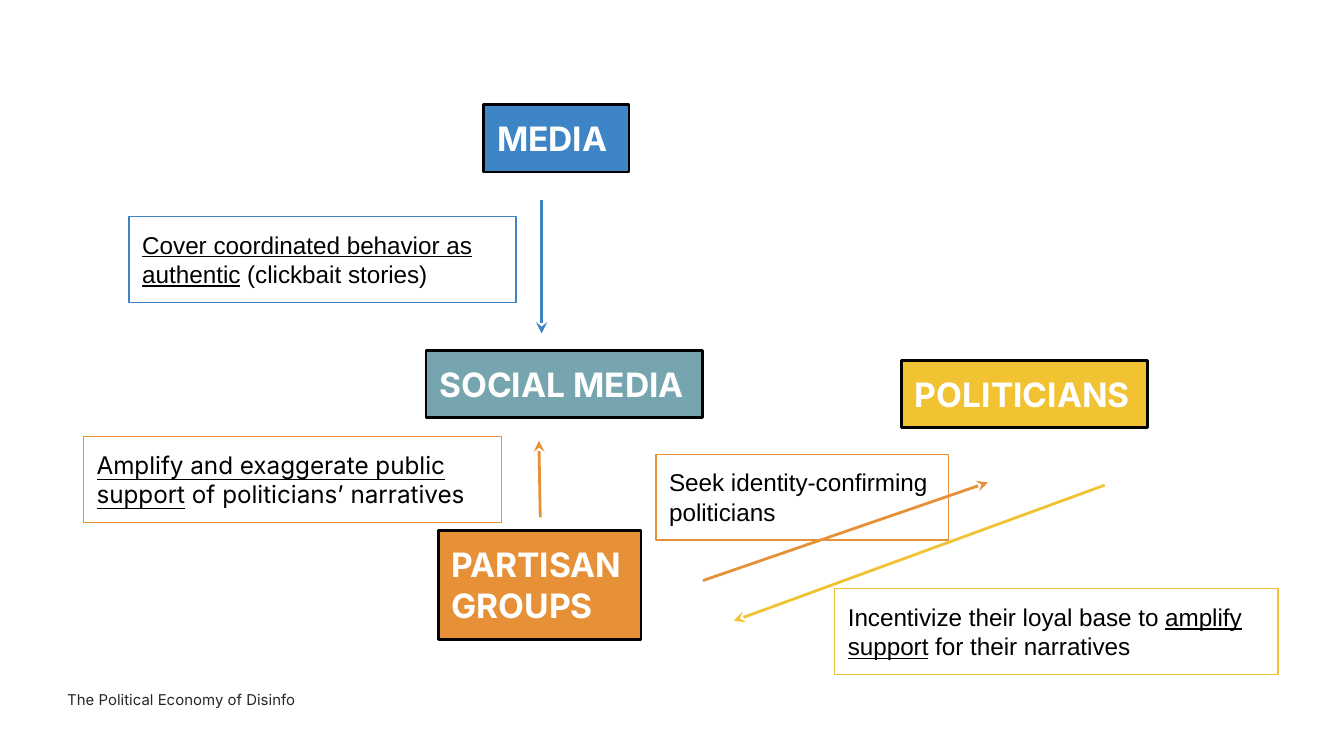
from typing import NamedTuple

from lxml import etree
from pptx import Presentation
from pptx.dml.color import RGBColor
from pptx.enum import shapes, text
from pptx.oxml import ns
from pptx.util import Inches, Pt

BLUE = RGBColor(0x3D, 0x85, 0xC6)
TEAL = RGBColor(0x76, 0xA5, 0xAF)
ORANGE = RGBColor(0xE6, 0x91, 0x38)
YELLOW = RGBColor(0xF1, 0xC2, 0x32)
BLACK = RGBColor(0, 0, 0)
WHITE = RGBColor(0xFF, 0xFF, 0xFF)
GREY = RGBColor(0x26, 0x26, 0x26)


class Area(NamedTuple):
    left: float
    top: float
    width: float
    height: float


class Actor(NamedTuple):
    name: str
    area: Area
    color: RGBColor


class Note(NamedTuple):
    runs: list[tuple[str, bool]]  # words, underlined
    area: Area
    color: RGBColor
    font: str = "Arial"


class Arrow(NamedTuple):
    tail: tuple[float, float]
    tip: tuple[float, float]
    color: RGBColor


ACTORS = [
    Actor("POLITICIANS", Area(6.71, 2.68, 1.83, 0.5), YELLOW),
    Actor("PARTISAN GROUPS", Area(3.26, 3.95, 1.51, 0.81), ORANGE),
    Actor("MEDIA", Area(3.6, 0.78, 1.08, 0.5), BLUE),
    Actor("SOCIAL MEDIA", Area(3.17, 2.61, 2.06, 0.5), TEAL),
]
ARROWS = [
    Arrow((8.22, 3.61), (5.46, 4.62), YELLOW),
    Arrow((4.02, 3.85), (4.01, 3.28), ORANGE),
    Arrow((4.03, 1.49), (4.03, 2.48), BLUE),
    Arrow((5.23, 4.32), (7.35, 3.59), ORANGE),
]
NOTES = [
    Note([("Amplify and exaggerate public support", True),
          (" of politicians’ narratives", False)],
         Area(0.62, 3.25, 3.11, 0.64), ORANGE, "Inter"),
    Note([("Cover coordinated behavior as authentic", True),
          (" (clickbait stories)", False)],
         Area(0.96, 1.61, 2.88, 0.64), BLUE),
    Note([("Seek identity-confirming politicians", False)],
         Area(4.88, 3.38, 2.18, 0.64), ORANGE),
    Note([("Incentivize their loyal base to ", False),
          ("amplify support", True),
          (" for their narratives", False)],
         Area(6.21, 4.38, 3.3, 0.64), YELLOW),
]


def style(para, font: str, size: float, color: RGBColor, bold: bool = False) -> None:
    para.alignment = text.PP_ALIGN.LEFT
    para.font.name = font
    para.font.size = Pt(size)
    para.font.color.rgb = color
    para.font.bold = bold


def set_frame(frame, inset: float) -> None:
    frame.word_wrap = True
    frame.vertical_anchor = text.MSO_ANCHOR.TOP
    frame.margin_left = frame.margin_right = Inches(inset)
    frame.margin_top = frame.margin_bottom = Inches(inset)


def add_box(slide, area: Area, edge: RGBColor, width: float):
    """Add an unfilled, outlined rectangle ready for text."""
    box = slide.shapes.add_shape(shapes.MSO_SHAPE.RECTANGLE, *map(Inches, area))
    box.shadow.inherit = False
    box.fill.background()
    box.line.color.rgb = edge
    box.line.width = Pt(width)
    set_frame(box.text_frame, 0.1)
    return box


def add_actor(slide, actor: Actor) -> None:
    box = add_box(slide, actor.area, BLACK, 1.5)
    box.fill.solid()
    box.fill.fore_color.rgb = actor.color
    para = box.text_frame.paragraphs[0]
    para.text = actor.name
    style(para, "Inter", 18, WHITE, bold=True)


def add_note(slide, note: Note) -> None:
    box = add_box(slide, note.area, note.color, 0.75)
    para = box.text_frame.paragraphs[0]
    style(para, note.font, 13, BLACK)
    for words, under in note.runs:
        run = para.add_run()
        run.text = words
        run.font.underline = under


def add_arrow(slide, arrow: Arrow) -> None:
    line = slide.shapes.add_connector(
        shapes.MSO_CONNECTOR.STRAIGHT, *map(Inches, arrow.tail + arrow.tip))
    line.line.color.rgb = arrow.color
    line.line.width = Pt(1.5)
    props = line._element.spPr
    etree.SubElement(props.find(ns.qn("a:ln")), ns.qn("a:tailEnd"), type="stealth")
    etree.SubElement(props, ns.qn("a:effectLst"))


def add_footer(slide, words: str, area: Area) -> None:
    frame = slide.shapes.add_textbox(*map(Inches, area)).text_frame
    set_frame(frame, 0)
    para = frame.paragraphs[0]
    para.text = words
    para.line_spacing = 1.2
    style(para, "Inter", 8, GREY)


def main() -> None:
    deck = Presentation()
    deck.slide_width = Inches(10)
    deck.slide_height = deck.slide_width * 9 // 16
    slide = deck.slides.add_slide(deck.slide_layouts[6])
    for actor in ACTORS:
        add_actor(slide, actor)
    for arrow in ARROWS:
        add_arrow(slide, arrow)
    for note in NOTES:
        add_note(slide, note)
    add_footer(slide, "The Political Economy of Disinfo", Area(0.5, 5.11, 1.78, 0.31))
    deck.save("out.pptx")


if __name__ == "__main__":
    main()
